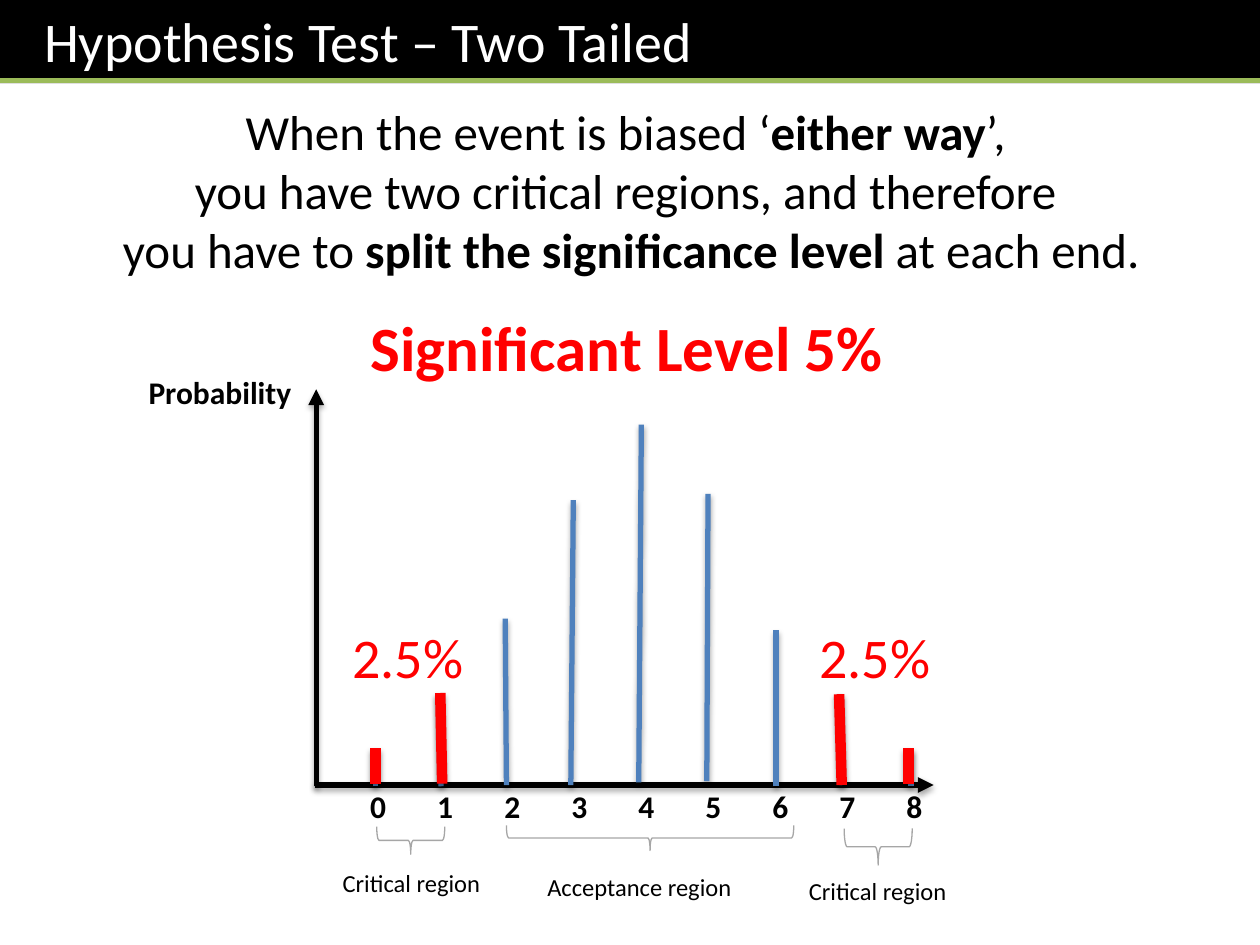
from dataclasses import dataclass

from lxml.etree import SubElement
from pptx import Presentation
from pptx.dml.color import RGBColor
from pptx.enum.shapes import MSO_CONNECTOR, MSO_SHAPE
from pptx.enum.text import MSO_ANCHOR, MSO_AUTO_SIZE, PP_ALIGN
from pptx.oxml.ns import qn
from pptx.util import Pt


@dataclass(frozen=True)
class Theme:
    font: str = "Calibri"
    black: str = "000000"
    white: str = "FFFFFF"
    green: str = "9BBB59"
    blue: str = "4F81BD"
    red: str = "FF0000"
    grey: str = "A6A6A6"
    heading: int = 36
    title: int = 32
    body: int = 28
    label: int = 18
    caption: int = 14
    thin: float = 0.75
    medium: float = 3
    thick: float = 6


class SlideBuilder:
    """Draws themed elements on one slide, with all lengths in points."""

    def __init__(self, presentation, theme):
        self.theme = theme
        self.slide = presentation.slides.add_slide(presentation.slide_layouts[5])

    def format_paragraph(self, paragraph, size, color, bold=False, align=PP_ALIGN.LEFT):
        paragraph.alignment = align
        paragraph.font.name = self.theme.font
        paragraph.font.size = Pt(size)
        paragraph.font.bold = bold
        paragraph.font.color.rgb = RGBColor.from_string(color)

    def title(self, text, width, height):
        shape = self.slide.shapes.title
        shape.left, shape.top, shape.width, shape.height = 0, 0, Pt(width), Pt(height)
        shape.fill.solid()
        shape.fill.fore_color.rgb = RGBColor.from_string(self.theme.black)
        frame = shape.text_frame
        frame.text = text
        frame.auto_size = MSO_AUTO_SIZE.NONE
        frame.vertical_anchor = MSO_ANCHOR.TOP
        frame.margin_left = Pt(25.2)
        self.format_paragraph(frame.paragraphs[0], self.theme.title, self.theme.white)

    def text(self, lines, box, size, color, bold=False, align=PP_ALIGN.CENTER):
        shape = self.slide.shapes.add_textbox(*map(Pt, box))
        frame = shape.text_frame
        frame.word_wrap = True
        for index, line in enumerate(lines):
            paragraph = frame.add_paragraph() if index else frame.paragraphs[0]
            for part, strong in line:
                run = paragraph.add_run()
                run.text = part
                if strong:
                    run.font.bold = True
            self.format_paragraph(paragraph, size, color, bold, align)

    def label(self, text, box, size, color, bold=False, align=PP_ALIGN.CENTER):
        self.text([[(text, False)]], box, size, color, bold, align)

    def line(self, ends, color, width, arrow=False, shadow=True):
        connector = self.slide.shapes.add_connector(MSO_CONNECTOR.STRAIGHT, *map(Pt, ends))
        connector.line.color.rgb = RGBColor.from_string(color)
        connector.line.width = Pt(width)
        if arrow:
            SubElement(connector.line._get_or_add_ln(), qn("a:tailEnd"), type="triangle")
        properties = connector._element.spPr
        effects = SubElement(properties, qn("a:effectLst"))
        if shadow:
            outer = SubElement(effects, qn("a:outerShdw"), blurRad=str(Pt(3.1)),
                               dist=str(Pt(1.8)), dir="5400000", rotWithShape="0")
            shade = SubElement(outer, qn("a:srgbClr"), val=self.theme.black)
            SubElement(shade, qn("a:alpha"), val="35000")

    def brace_below(self, left, top, width, height):
        middle_x, middle_y = left + width / 2, top + height / 2
        box = (middle_x - height / 2, middle_y - width / 2, height, width)
        shape = self.slide.shapes.add_shape(MSO_SHAPE.LEFT_BRACE, *map(Pt, box))
        shape.rotation = 270
        shape.shadow.inherit = False
        shape.fill.background()
        shape.line.color.rgb = RGBColor.from_string(self.theme.grey)
        shape.line.width = Pt(self.theme.thin)


def main():
    theme = Theme()
    presentation = Presentation()
    presentation.slide_width, presentation.slide_height = Pt(720), Pt(540)
    builder = SlideBuilder(presentation, theme)

    builder.title("Hypothesis Test – Two Tailed", 720, 47.5)
    builder.line((0, 46.1, 720, 46.1), theme.green, theme.medium, shadow=False)

    for axis in [(180, 448.6, 533.5, 448.6), (180.7, 449.3, 180.7, 222.5)]:
        builder.line(axis, theme.black, theme.medium, arrow=True)

    probability_bars = [
        (214.6, 449.3, 214.6, 429.1),
        (252, 449.3, 250.6, 397.4),
        (289.4, 448.6, 288.7, 353.5),
        (326.2, 448.6, 327.6, 285.8),
        (365, 447.1, 366.5, 242.6),
        (403.9, 446.4, 404.6, 282.2),
        (443.5, 449.3, 443.5, 360),
        (481, 448.6, 479.5, 396.7),
        (520.6, 449.3, 520.6, 429.1),
    ]
    critical_bars = [
        (214.6, 447.8, 214.6, 427.7),
        (252.7, 447.8, 251.6, 396),
        (481, 448.6, 479.5, 396.7),
        (519.1, 447.8, 519.1, 427.7),
    ]
    for bars, color, width in [(probability_bars, theme.blue, theme.medium),
                               (critical_bars, theme.red, theme.thick)]:
        for bar in bars:
            builder.line(bar, color, width)

    builder.label("Significant Level 5%", (201.6, 172.8, 313.2, 51.1),
                  theme.heading, theme.red, bold=True)
    for left in (185.8, 452.9):
        builder.label("2.5%", (left, 352.1, 94.3, 46.1), theme.title, theme.red)

    regions = [
        ("Critical region", (185.8, 492.5, 98.6, 24.5), (215.3, 472.3, 38.9, 15.8)),
        ("Acceptance region", (303.1, 494.6, 124.6, 24.5), (289.4, 471.6, 164.2, 14.4)),
        ("Critical region", (439.2, 496.8, 124.6, 24.5), (482.4, 473.4, 38.9, 20.9)),
    ]
    for name, box, brace in regions:
        builder.label(name, box, theme.caption, theme.black)
        builder.brace_below(*brace)

    for outcome in range(len(probability_bars)):
        builder.label(str(outcome), (204.5 + 38.3 * outcome, 446.4, 23.8, 29.5),
                      theme.label, theme.black, bold=True, align=PP_ALIGN.LEFT)

    builder.text([
        [("When the event is biased ‘", False), ("either way", True), ("’, ", False)],
        [("you have two critical regions, and therefore ", False)],
        [("you have to ", False), ("split the significance level ", True),
         ("at each end.", False)],
    ], (0.7, 54.7, 720, 108.7), theme.body, theme.black)
    builder.label("Probability", (77.8, 209.5, 98.6, 28.8),
                  theme.label, theme.black, bold=True, align=PP_ALIGN.LEFT)

    presentation.save("out.pptx")


if __name__ == "__main__":
    main()
